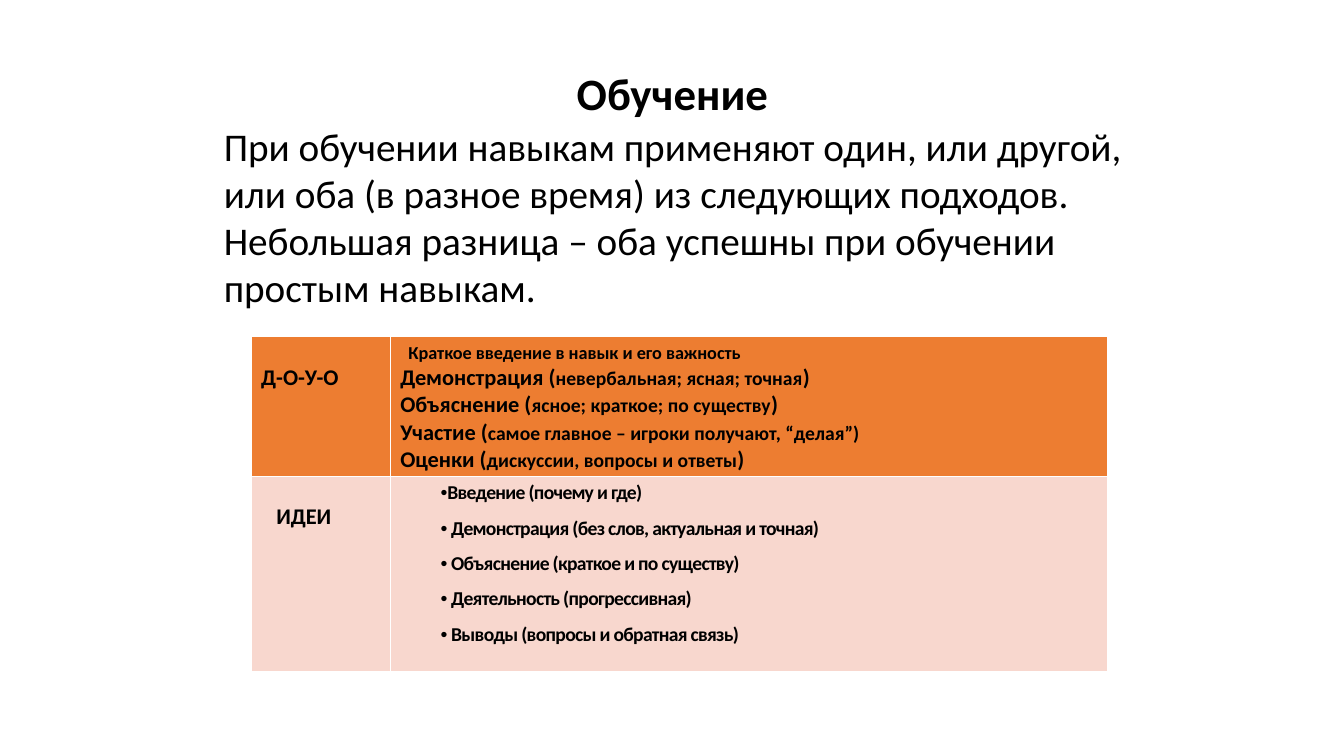
from lxml.etree import SubElement
from pptx import Presentation
from pptx.dml.color import RGBColor
from pptx.enum.text import MSO_ANCHOR, PP_ALIGN
from pptx.oxml.ns import qn
from pptx.util import Inches, Pt

ORANGE, PINK, BLACK = "ED7D31", "F8D7CE", "000000"


def style(span, size, bold=True):
    span.font.name = "Calibri"
    span.font.size = Pt(size)
    span.font.bold = bold
    span.font.color.rgb = RGBColor.from_string(BLACK)


def fill_paragraph(para, parts):
    """Add (text, size) parts to a paragraph as bold runs."""
    for text, size in parts:
        span = para.add_run()
        span.text = text
        style(span, size)


deck = Presentation()
deck.slide_width, deck.slide_height = Inches(13.33), Inches(7.5)
page = deck.slides.add_slide(deck.slide_layouts[5])

# Title
title = page.shapes.title
title.left, title.top = Inches(1.67), Inches(0.6)
title.width, title.height = Inches(10), Inches(0.64)
title.text_frame.text = "Обучение"
title.text_frame.vertical_anchor = MSO_ANCHOR.MIDDLE
title.text_frame.paragraphs[0].alignment = PP_ALIGN.CENTER
style(title.text_frame.paragraphs[0].runs[0], 32)

# Introduction
intro = page.shapes.add_textbox(Inches(1.78), Inches(1.39), Inches(9.76), Inches(1.51))
frame = intro.text_frame
frame.word_wrap = True
frame.vertical_anchor = MSO_ANCHOR.MIDDLE
frame.margin_left = Inches(0.44)
frame.text = (
    "При обучении навыкам применяют один, или другой, или оба (в разное время) "
    "из следующих подходов. Небольшая разница – оба успешны при обучении простым навыкам."
)
style(frame.paragraphs[0].runs[0], 28, bold=False)

# Table of the two approaches
table = page.shapes.add_table(
    2, 2, Inches(2.49), Inches(3.34), Inches(8.5), Inches(3.32)
).table
table.horz_banding = False
for column, width in zip(table.columns, (1.38, 7.12)):
    column.width = Inches(width)
for row, height, color in zip(table.rows, (1.38, 1.94), (ORANGE, PINK)):
    row.height = Inches(height)
    for cell in row.cells:
        cell.fill.solid()
        cell.fill.fore_color.rgb = RGBColor.from_string(color)

for row, (label, left) in enumerate((("Д-О-У-О", 0.1), ("ИДЕИ", 0.25))):
    cell = table.cell(row, 0)
    cell.margin_left, cell.margin_top = Inches(left), Inches(0.27)
    fill_paragraph(cell.text_frame.paragraphs[0], [(label, 16)])

steps = (
    [("Краткое введение в навык и его важность", 13)],
    [("Демонстрация (", 16), ("невербальная; ясная; точная", 14), (")", 16)],
    [("Объяснение (", 16), ("ясное; краткое; по существу", 14), (")", 16)],
    [("Участие (", 16), ("самое главное – игроки получают, “делая”)", 14)],
    [("Оценки (", 16), ("дискуссии, вопросы и ответы", 14), (")", 16)],
)
frame = table.cell(0, 1).text_frame
for index, parts in enumerate(steps):
    para = frame.add_paragraph() if index else frame.paragraphs[0]
    fill_paragraph(para, parts)
frame.paragraphs[0]._p.get_or_add_pPr().set("marL", str(Inches(0.08)))

ideas = (
    "Введение (почему и где)",
    " Демонстрация (без слов, актуальная и точная)",
    " Объяснение (краткое и по существу)",
    " Деятельность (прогрессивная)",
    " Выводы (вопросы и обратная связь)",
)
frame = table.cell(1, 1).text_frame
for index, idea in enumerate(ideas):
    para = frame.add_paragraph() if index else frame.paragraphs[0]
    if index:
        para.space_before = Pt(8.2)
    properties = para._p.get_or_add_pPr()
    properties.set("marL", str(Inches(0.4)))
    properties.set("indent", "0")
    SubElement(properties, qn("a:buFont")).set("typeface", "Arial")
    SubElement(properties, qn("a:buChar")).set("char", "•")
    fill_paragraph(para, [(idea, 14)])
    para.runs[0]._r.get_or_add_rPr().set("spc", "-50")

deck.save("out.pptx")
